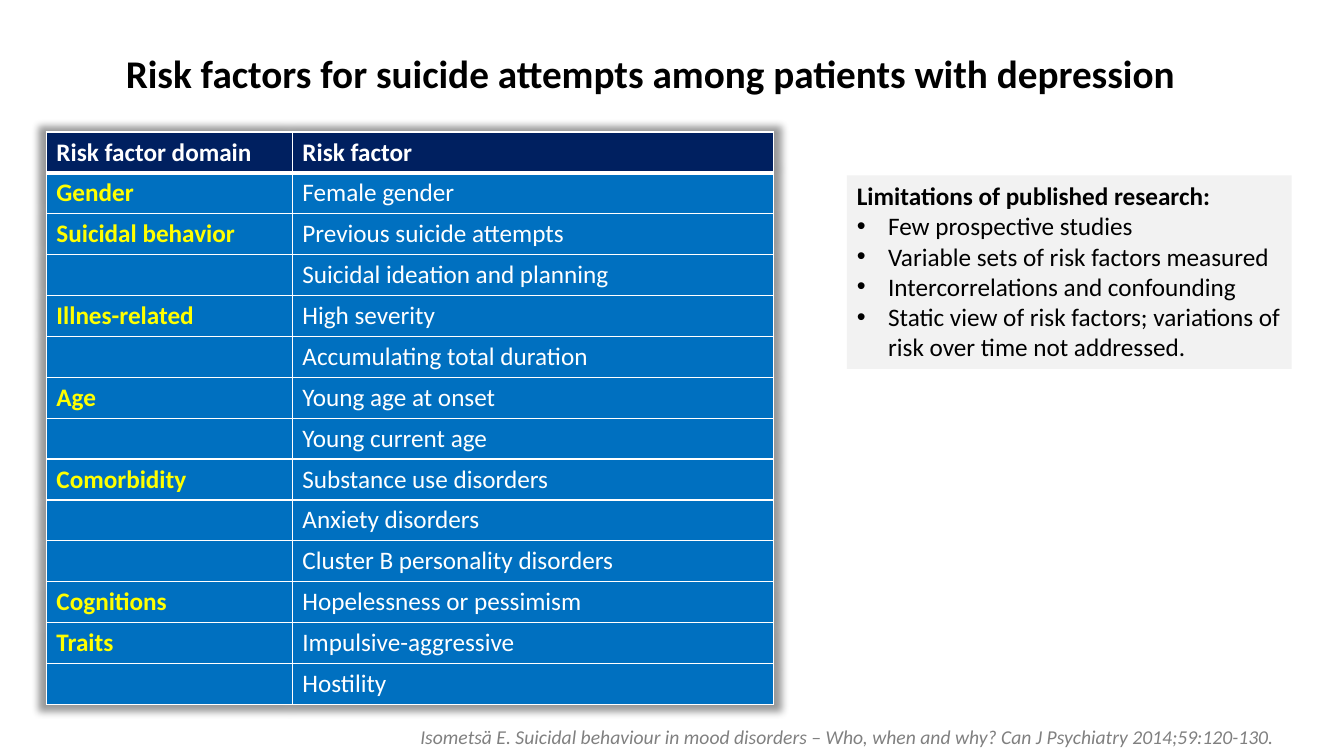
"""Build a slide on risk factors for suicide attempts in depression."""
from dataclasses import dataclass, field

from lxml.etree import SubElement
from pptx import Presentation
from pptx.dml.color import RGBColor as Rgb
from pptx.enum.shapes import MSO_SHAPE as Preset
from pptx.enum.text import MSO_ANCHOR as Anchor, PP_ALIGN as Align
from pptx.oxml import parse_xml
from pptx.oxml.ns import nsdecls, qn
from pptx.util import Inches, Pt

FONT = "Calibri"
COLORS = {
    "header": "002060", "body": "0070C0", "domain": "FFFF00", "white": "FFFFFF",
    "black": "000000", "source": "808080", "panel": "F2F2F2",
}
BULLET_INDENT = Inches(0.31)
TABLE_LEFT, TABLE_TOP, TABLE_HEIGHT = 0.46, 1.31, 5.68
COLUMN_WIDTHS = (2.44, 4.77)
HEADER = ("Risk factor domain", "Risk factor")
RISK_FACTORS = {
    "Gender": ["Female gender"],
    "Suicidal behavior": ["Previous suicide attempts", "Suicidal ideation and planning"],
    "Illnes-related": ["High severity", "Accumulating total duration"],
    "Age": ["Young age at onset", "Young current age"],
    "Comorbidity": ["Substance use disorders", "Anxiety disorders",
                    "Cluster B personality disorders"],
    "Cognitions": ["Hopelessness or pessimism"],
    "Traits": ["Impulsive-aggressive", "Hostility"],
}


@dataclass
class Line:
    """One paragraph with its format."""
    text: str
    size: int = 18
    color: str = "black"
    bullet: bool = False
    style: dict = field(default_factory=dict)


@dataclass
class Block:
    """A rectangle of text, filled when a fill is named."""
    left: float
    top: float
    width: float
    height: float
    lines: list[Line]
    fill: str | None = None


BLOCKS = [
    Block(1.15, 0.44, 11.26, 0.57, [
        Line("Risk factors for suicide attempts among patients with depression",
             28, style={"bold": True})]),
    Block(4.07, 7.14, 8.98, 0.34, [
        Line("Isometsä E. Suicidal behaviour in mood disorders – Who, when and why? "
             "Can J Psychiatry 2014;59:120-130.", 14, "source", style={"italic": True})]),
    Block(8.4, 1.74, 4.41, 1.92, [
        Line("Limitations of published research:", style={"bold": True}),
        Line("Few prospective studies", bullet=True),
        Line("Variable sets of risk factors measured", bullet=True),
        Line("Intercorrelations and confounding", bullet=True),
        Line("Static view of risk factors; variations of risk over time not addressed.",
             bullet=True)], "panel"),
]


def rgb(name: str) -> Rgb:
    """Look up a named colour."""
    return Rgb.from_string(COLORS[name])


def write_line(para, line: Line) -> None:
    """Write one formatted line into a paragraph."""
    para.alignment = Align.LEFT
    if line.bullet:
        props = para._p.get_or_add_pPr()
        props.set("marL", str(BULLET_INDENT))
        props.set("indent", str(-BULLET_INDENT))
        SubElement(props, qn("a:buFont"), typeface="Arial")
        SubElement(props, qn("a:buChar"), char="•")
    span = para.add_run()
    span.text = line.text
    values = {"name": FONT, "size": Pt(line.size), "bold": False, **line.style}
    for name, value in values.items():
        setattr(span.font, name, value)
    span.font.color.rgb = rgb(line.color)


def draw_block(page, block: Block) -> None:
    """Draw a text box or a filled text panel."""
    place = [Inches(v) for v in (block.left, block.top, block.width, block.height)]
    if block.fill:
        box = page.shapes.add_shape(Preset.RECTANGLE, *place)
        box.shadow.inherit = False
        box.fill.solid()
        box.fill.fore_color.rgb = rgb(block.fill)
        box.line.fill.background()
    else:
        box = page.shapes.add_textbox(*place)
    frame = box.text_frame
    for name, value in {"word_wrap": True, "vertical_anchor": Anchor.TOP}.items():
        setattr(frame, name, value)
    for index, line in enumerate(block.lines):
        write_line(frame.add_paragraph() if index else frame.paragraphs[0], line)


def format_cell(cell, is_header: bool, below_header: bool) -> None:
    """Give a cell its white borders and its fill."""
    thick_side = "B" if is_header else "T" if below_header else ""
    props = cell._tc.get_or_add_tcPr()
    for side in "LRTB":
        width = Pt(3 if side == thick_side else 1)
        border = SubElement(props, qn(f"a:ln{side}"), w=str(width))
        fill = SubElement(border, qn("a:solidFill"))
        SubElement(fill, qn("a:srgbClr"), val=COLORS["white"])
    cell.fill.solid()
    cell.fill.fore_color.rgb = rgb("header" if is_header else "body")


def draw_table(page) -> None:
    """Draw the table of risk factors with a soft shadow."""
    rows = [HEADER] + [(domain if index == 0 else "", factor)
                       for domain, factors in RISK_FACTORS.items()
                       for index, factor in enumerate(factors)]
    place = (TABLE_LEFT, TABLE_TOP, sum(COLUMN_WIDTHS), TABLE_HEIGHT)
    table = page.shapes.add_table(len(rows), len(HEADER), *map(Inches, place)).table
    table.horz_banding = False
    table._tbl.tblPr.insert(0, parse_xml(
        f'<a:effectLst {nsdecls("a")}><a:outerShdw blurRad="63500" sx="102000" '
        'sy="102000" algn="ctr" rotWithShape="0"><a:srgbClr val="000000">'
        '<a:alpha val="40000"/></a:srgbClr></a:outerShdw></a:effectLst>'))
    for column, width in zip(table.columns, COLUMN_WIDTHS):
        column.width = Inches(width)
    for row_index, texts in enumerate(rows):
        table.rows[row_index].height = Inches(TABLE_HEIGHT / len(rows))
        for column_index, text in enumerate(texts):
            is_header, is_domain = row_index == 0, column_index == 0
            cell = table.cell(row_index, column_index)
            format_cell(cell, is_header, row_index == 1)
            if text:
                color = "domain" if is_domain and not is_header else "white"
                write_line(cell.text_frame.paragraphs[0], Line(
                    text, color=color, style={"bold": is_header or is_domain}))


def main() -> None:
    """Build and save the deck."""
    deck = Presentation()
    deck.slide_width, deck.slide_height = Inches(13.33), Inches(7.5)
    page = deck.slides.add_slide(deck.slide_layouts[6])
    draw_table(page)
    for block in BLOCKS:
        draw_block(page, block)
    deck.save("out.pptx")


if __name__ == "__main__":
    main()
